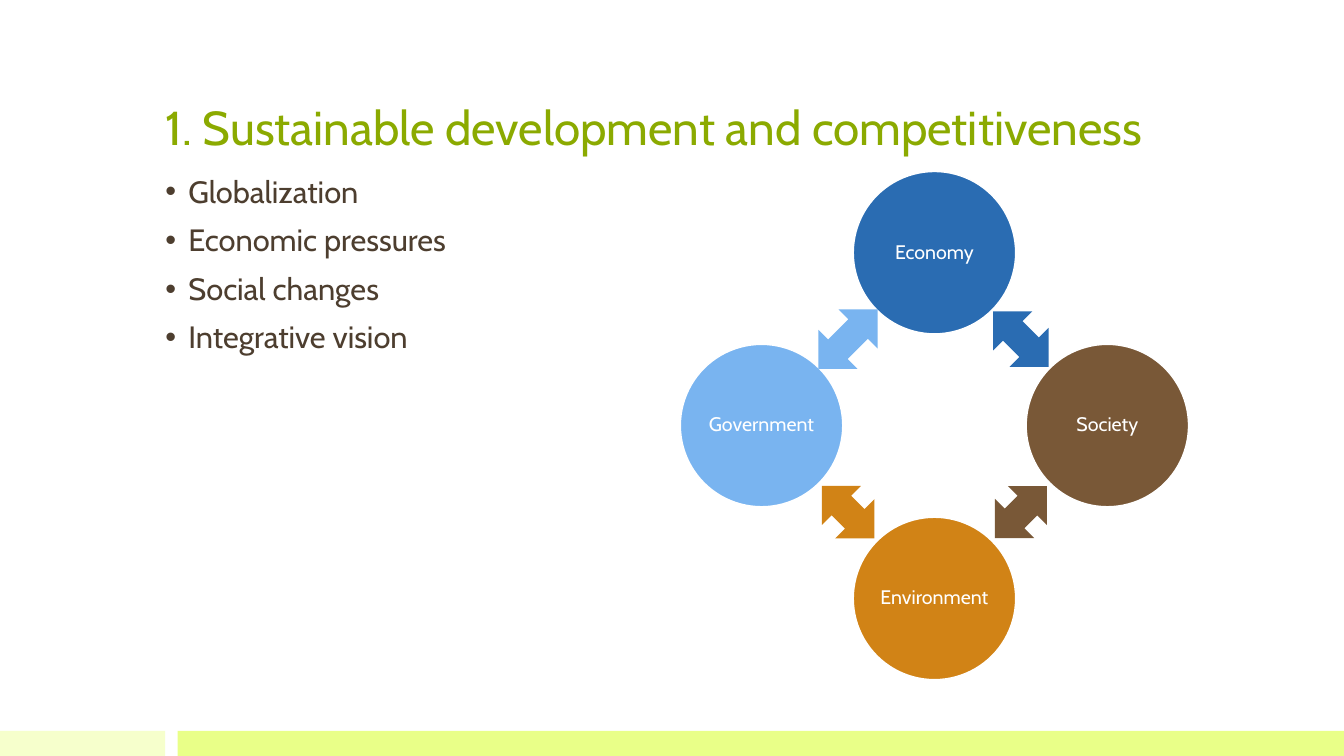
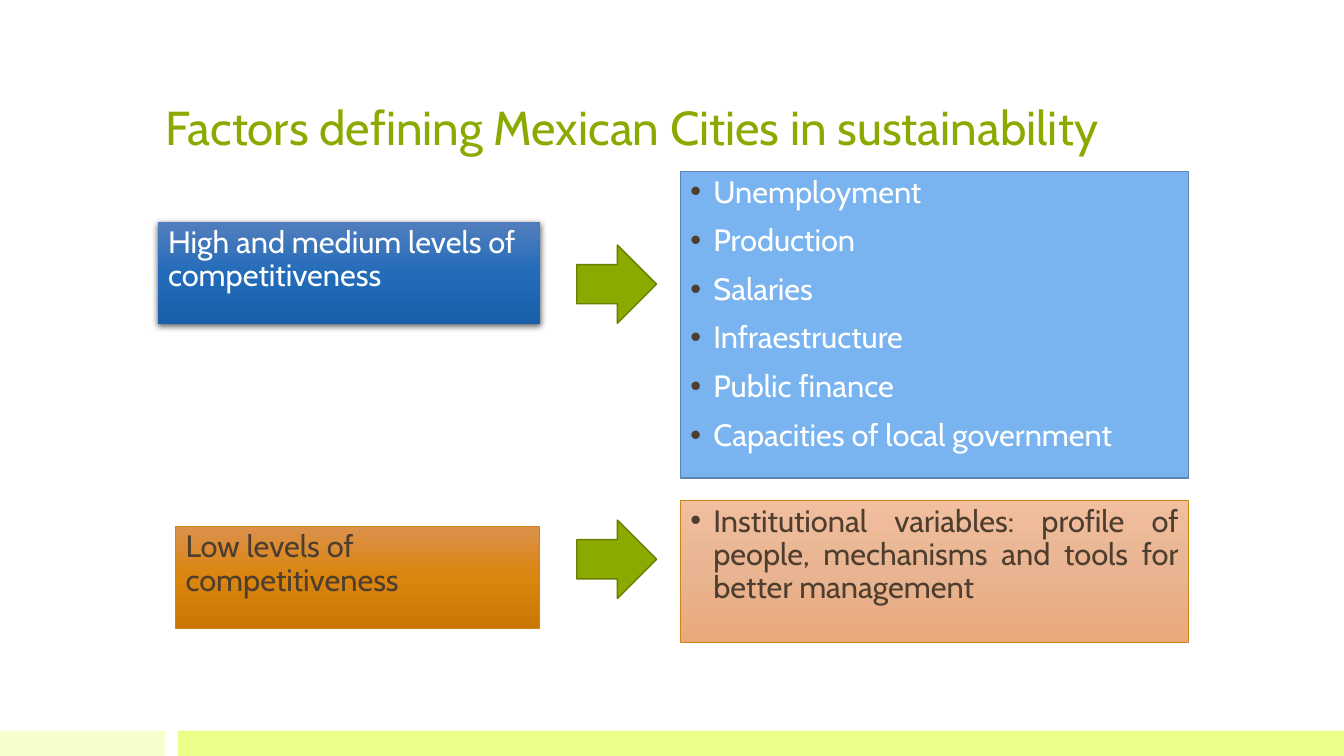
from math import cos, pi, sin

from copy import deepcopy
from lxml.etree import SubElement
from pptx import Presentation
from pptx.dml.color import RGBColor
from pptx.enum.shapes import MSO_SHAPE as Shape
from pptx.enum.text import MSO_ANCHOR as Anchor, MSO_AUTO_SIZE as AutoSize, PP_ALIGN as Align
from pptx.oxml.ns import qn
from pptx.util import Pt

FONT = "Cabin"
WIDTH, HEIGHT = 960, 540
BAND_HEIGHT = 18
TITLE_BOX = (111, 21.5, 738, 93)
INDENT = 16.5
COLORS = {
    "title": "8BAA00", "text": "4D3E2F", "white": "FFFFFF",
    "pale_band": "F6FFCC", "lime_band": "E9FF88",
    "blue": "2A6CB2", "brown": "795837", "orange": "D18316", "sky": "79B4F0",
    "sky_line": "5A85B2", "arrow_line": "677E00",
}
GRADIENTS = {
    "blue": ("527EBD", "236CB9", "1960AA"),
    "peach": ("F2BF9E", "E8B491", "EAA97C"),
    "orange": ("DB914C", "DA850D", "CA7703"),
}


def color(name):
    return RGBColor.from_string(COLORS[name])


def points(box):
    return [Pt(value) for value in box]


def add_figure(slide, kind, box, fill=None, line=None, line_width=1):
    """Add a preset shape without shadow; fill and line are colour names."""
    shape = slide.shapes.add_shape(kind, *points(box))
    shape.shadow.inherit = False
    if fill:
        shape.fill.solid()
        shape.fill.fore_color.rgb = color(fill)
    if line:
        shape.line.color.rgb = color(line)
        shape.line.width = Pt(line_width)
    else:
        shape.line.fill.background()
    return shape


def fill_gradient(shape, stops):
    """Fill from top to bottom with three evenly spaced colours."""
    shape.fill.gradient()
    shape.fill.gradient_angle = 270
    stop_list = shape._element.spPr.find(".//" + qn("a:gsLst"))
    stop_list.append(deepcopy(stop_list[0]))
    for index, (stop, value) in enumerate(zip(shape.fill.gradient_stops, stops)):
        stop.position = index / 2
        stop.color.rgb = RGBColor.from_string(value)


def add_shadow(shape):
    effects = shape._element.spPr.find(qn("a:effectLst"))
    shadow = SubElement(effects, qn("a:outerShdw"), blurRad=str(Pt(4.5)),
                        dist=str(Pt(1.5)), dir="5400000", algn="ctr", rotWithShape="0")
    tint = SubElement(shadow, qn("a:srgbClr"), val="000000")
    SubElement(tint, qn("a:alpha"), val="63000")


def add_bullet(paragraph):
    properties = paragraph._p.get_or_add_pPr()
    properties.set("marL", str(Pt(INDENT)))
    properties.set("indent", str(Pt(-INDENT)))
    bullet_color = SubElement(properties, qn("a:buClr"))
    SubElement(bullet_color, qn("a:srgbClr"), val=COLORS["text"])
    SubElement(properties, qn("a:buFont"), typeface="Arial")
    SubElement(properties, qn("a:buChar"), char="•")


def add_run(paragraph, text, size, color_name):
    run = paragraph.add_run()
    run.text = text
    run.font.name = FONT
    run.font.size = Pt(size)
    run.font.color.rgb = color(color_name)


def write_lines(frame, lines, color_name="text", bullets=True, align=Align.LEFT):
    frame.word_wrap = True
    frame.vertical_anchor = Anchor.TOP
    for index, line in enumerate(lines):
        paragraph = frame.add_paragraph() if index else frame.paragraphs[0]
        paragraph.alignment = align
        paragraph.line_spacing = 0.9
        paragraph.space_before = Pt(11)
        if bullets:
            add_bullet(paragraph)
        add_run(paragraph, line, 22, color_name)


def add_titled_slide(presentation, title):
    slide = presentation.slides.add_slide(presentation.slide_layouts[5])
    shape = slide.shapes.title
    shape.left, shape.top, shape.width, shape.height = points(TITLE_BOX)
    frame = shape.text_frame
    frame.word_wrap = True
    frame.auto_size = AutoSize.NONE
    frame.vertical_anchor = Anchor.BOTTOM
    frame.paragraphs[0].alignment = Align.LEFT
    add_run(frame.paragraphs[0], title, 34, "title")
    return slide


def move_bands_to_layout(slide):
    """Draw the bottom bands and hand them to the layout all slides use."""
    top = HEIGHT - BAND_HEIGHT
    for left, right, fill in ((0, 118, "pale_band"), (127, WIDTH, "lime_band")):
        band = add_figure(slide, Shape.RECTANGLE, (left, top, right - left, BAND_HEIGHT), fill)
        slide.slide_layout.shapes._spTree.append(band._element)


def add_bullet_list(slide, box, lines):
    write_lines(slide.shapes.add_textbox(*points(box)).text_frame, lines)


def add_cycle(slide, box, nodes, diameter=116, arrow_height=39.5):
    """Place nodes clockwise from the top, each followed by a two-way arrow."""
    left, top, width, height = box
    center_x, center_y = left + width / 2, top + height / 2
    radius = (width - diameter) / 2
    arrow_radius = radius * cos(pi / 4)
    for index, (label, fill, arrow_length) in enumerate(nodes):
        angle = index * pi / 2 - pi / 2
        x, y = center_x + radius * cos(angle), center_y + radius * sin(angle)
        circle = add_figure(slide, Shape.OVAL,
                            (x - diameter / 2, y - diameter / 2, diameter, diameter), fill, "white")
        frame = circle.text_frame
        frame.word_wrap = True
        frame.vertical_anchor = Anchor.MIDDLE
        frame.margin_left = frame.margin_right = frame.margin_top = frame.margin_bottom = Pt(1.4)
        frame.paragraphs[0].alignment = Align.CENTER
        frame.paragraphs[0].line_spacing = 0.9
        add_run(frame.paragraphs[0], label, 14, "white")

        angle += pi / 4
        x, y = center_x + arrow_radius * cos(angle), center_y + arrow_radius * sin(angle)
        arrow = add_figure(slide, Shape.LEFT_RIGHT_ARROW,
                           (x - arrow_length / 2, y - arrow_height / 2, arrow_length, arrow_height), fill)
        arrow.rotation = 45 + 90 * index


def add_panel(slide, box, lines, fill=None, gradient=None, line=None, line_width=0.5, **text_style):
    panel = add_figure(slide, Shape.RECTANGLE, box, fill, line, line_width)
    if gradient:
        fill_gradient(panel, GRADIENTS[gradient])
    write_lines(panel.text_frame, lines, **text_style)
    return panel


def add_development_slide(presentation):
    slide = add_titled_slide(presentation, "1. Sustainable development and competitiveness")
    move_bands_to_layout(slide)
    add_bullet_list(slide, (111, 122.5, 287, 144),
                    ["Globalization", "Economic pressures", "Social changes", "Integrative vision"])
    add_cycle(slide, (486, 123, 363, 362), [
        ("Economy", "blue", 56),
        ("Society", "brown", 52.5),
        ("Environment", "orange", 53),
        ("Government", "sky", 60),
    ])


def add_factors_slide(presentation):
    slide = add_titled_slide(presentation, "Factors defining Mexican Cities in sustainability")
    high_levels = add_panel(slide, (113, 158.5, 273, 73), ["High and medium levels of competitiveness"],
                            gradient="blue", color_name="white", bullets=False)
    add_shadow(high_levels)
    factors = ["Unemployment", "Production", "Salaries", "Infraestructure",
               "Public finance", "Capacities of local government"]
    add_panel(slide, (486, 122.5, 363, 219), factors, fill="sky", line="sky_line",
              line_width=1, color_name="white")
    add_panel(slide, (486, 357.5, 363, 101),
              ["Institutional variables: profile of people, mechanisms and tools for better management"],
              gradient="peach", line="orange", align=Align.JUSTIFY)
    add_panel(slide, (125.5, 376, 260, 73), ["Low levels of competitiveness"],
              gradient="orange", line="orange", bullets=False)
    for top in (175, 371.5):
        add_figure(slide, Shape.RIGHT_ARROW, (412, top, 57, 56), "title", "arrow_line")


def main():
    presentation = Presentation()
    presentation.slide_width, presentation.slide_height = Pt(WIDTH), Pt(HEIGHT)
    add_development_slide(presentation)
    add_factors_slide(presentation)
    presentation.save("out.pptx")


if __name__ == "__main__":
    main()
